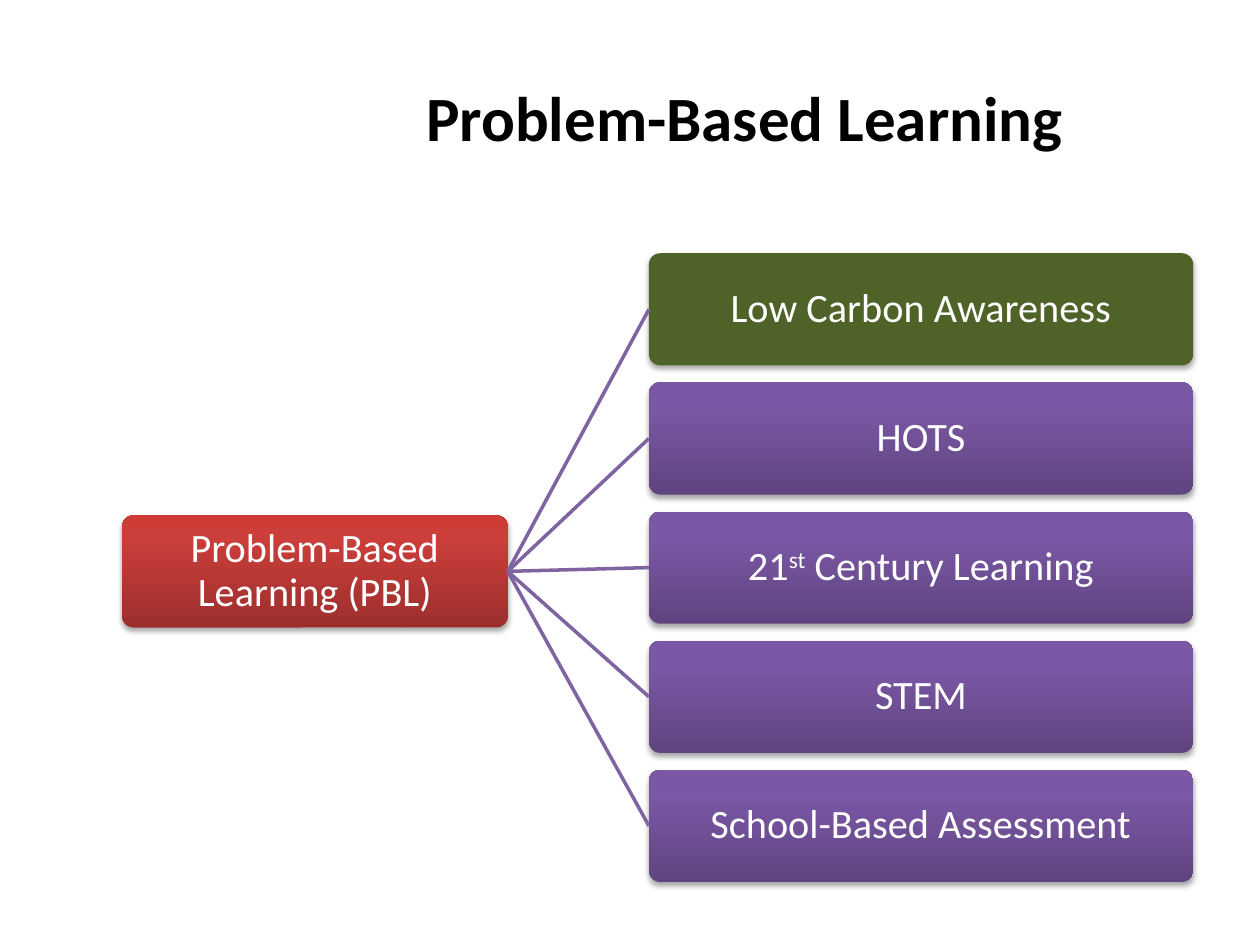
from copy import deepcopy

from lxml.etree import SubElement
from pptx import Presentation
from pptx.dml.color import RGBColor
from pptx.enum.shapes import MSO_CONNECTOR, MSO_SHAPE
from pptx.enum.text import MSO_ANCHOR, PP_ALIGN
from pptx.oxml.ns import qn
from pptx.util import Inches, Pt

COLORS = {
    "title": "000000",
    "label": "FFFFFF",
    "line": "8064A2",
    "shadow": "000000",
    "green": "4F6228",
}
GRADIENTS = {
    "red": [(0, "9C2F2D"), (0.8, "CB3E3A"), (1, "CE3B37")],
    "purple": [(0, "5F4480"), (0.8, "7B58A6"), (1, "7C57A8")],
}
TOPICS = [
    ([("Low Carbon Awareness", 0)], "green"),
    ([("HOTS", 0)], "purple"),
    ([("21", 0), ("st", 30), (" Century Learning", 0)], "purple"),
    ([("STEM", 0)], "purple"),
    ([("School-Based Assessment", 0)], "purple"),
]
TOPICS_TOP, TOPIC_PITCH = 2.01, 1.025
BOX_HEIGHT = 0.89


def rgb(name):
    return RGBColor.from_string(COLORS[name])


def write_text(shape, parts, size=23, color="label", bold=False, spacing=0.9, inset=0.05):
    """Fill a shape with one centred paragraph of (text, superscript percent) parts."""
    frame = shape.text_frame
    frame.word_wrap = True
    frame.vertical_anchor = MSO_ANCHOR.MIDDLE
    frame.margin_left = frame.margin_right = Inches(inset)
    frame.margin_top = frame.margin_bottom = Inches(inset)
    paragraph = frame.paragraphs[0]
    paragraph.alignment = PP_ALIGN.CENTER
    paragraph.line_spacing = spacing
    for text, raised in parts:
        run = paragraph.add_run()
        run.text = text
        run.font.name = "Calibri"
        run.font.size = Pt(size)
        run.font.bold = bold
        run.font.color.rgb = rgb(color)
        if raised:
            run.font._element.set("baseline", str(raised * 1000))


class Diagram:
    """Holds the slide and the shared look of its boxes and lines."""

    def __init__(self, slide, corner=0.1, line_width=2):
        self.slide = slide
        self.corner = corner
        self.line_width = line_width

    def title(self, text, left, top, width, height):
        shape = self.slide.shapes.add_textbox(
            Inches(left), Inches(top), Inches(width), Inches(height))
        write_text(shape, [(text, 0)], size=36, color="title", bold=True, spacing=1)

    def box(self, parts, fill, left, top, width):
        shape = self.slide.shapes.add_shape(
            MSO_SHAPE.ROUNDED_RECTANGLE,
            Inches(left), Inches(top), Inches(width), Inches(BOX_HEIGHT))
        shape.adjustments[0] = self.corner
        if fill in GRADIENTS:
            self.gradient(shape, GRADIENTS[fill])
        else:
            shape.fill.solid()
            shape.fill.fore_color.rgb = rgb(fill)
        shape.line.fill.background()
        self.soft_shadow(shape)
        write_text(shape, parts)
        return shape

    def gradient(self, shape, stops):
        """Apply three colour stops running from the bottom edge upwards."""
        shape.fill.gradient()
        shape.fill.gradient_angle = 90
        stop_list = shape._element.spPr.find(".//" + qn("a:gsLst"))
        stop_list.append(deepcopy(stop_list[0]))
        for stop, (position, color) in zip(shape.fill.gradient_stops, stops):
            stop.position = position
            stop.color.rgb = RGBColor.from_string(color)

    def soft_shadow(self, shape):
        shape.shadow.inherit = False
        effects = shape._element.spPr.find(qn("a:effectLst"))
        shadow = SubElement(effects, qn("a:outerShdw"), blurRad=str(Pt(3.1)),
                            dist=str(Pt(1.8)), dir="5400000", rotWithShape="0")
        color = SubElement(shadow, qn("a:srgbClr"), val=COLORS["shadow"])
        SubElement(color, qn("a:alpha"), val="35000")

    def link(self, source, target):
        """Join the right side of source to the left side of target."""
        connector = self.slide.shapes.add_connector(MSO_CONNECTOR.STRAIGHT, 0, 0, 0, 0)
        connector.begin_connect(source, 3)
        connector.end_connect(target, 1)
        connector.line.color.rgb = rgb("line")
        connector.line.width = Pt(self.line_width)
        SubElement(connector._element.spPr, qn("a:effectLst"))


def main():
    presentation = Presentation()
    presentation.slide_width = Inches(10)
    presentation.slide_height = Inches(7.5)
    diagram = Diagram(presentation.slides.add_slide(presentation.slide_layouts[6]))

    diagram.title("Problem-Based Learning", 2.32, 0.3, 7.18, 1.25)
    root = diagram.box([("Problem-Based Learning (PBL)", 0)], "red", 0.97, 4.09, 3.06)
    for index, (parts, fill) in enumerate(TOPICS):
        topic = diagram.box(parts, fill, 5.15, TOPICS_TOP + index * TOPIC_PITCH, 4.32)
        diagram.link(root, topic)

    presentation.save("out.pptx")


if __name__ == "__main__":
    main()
